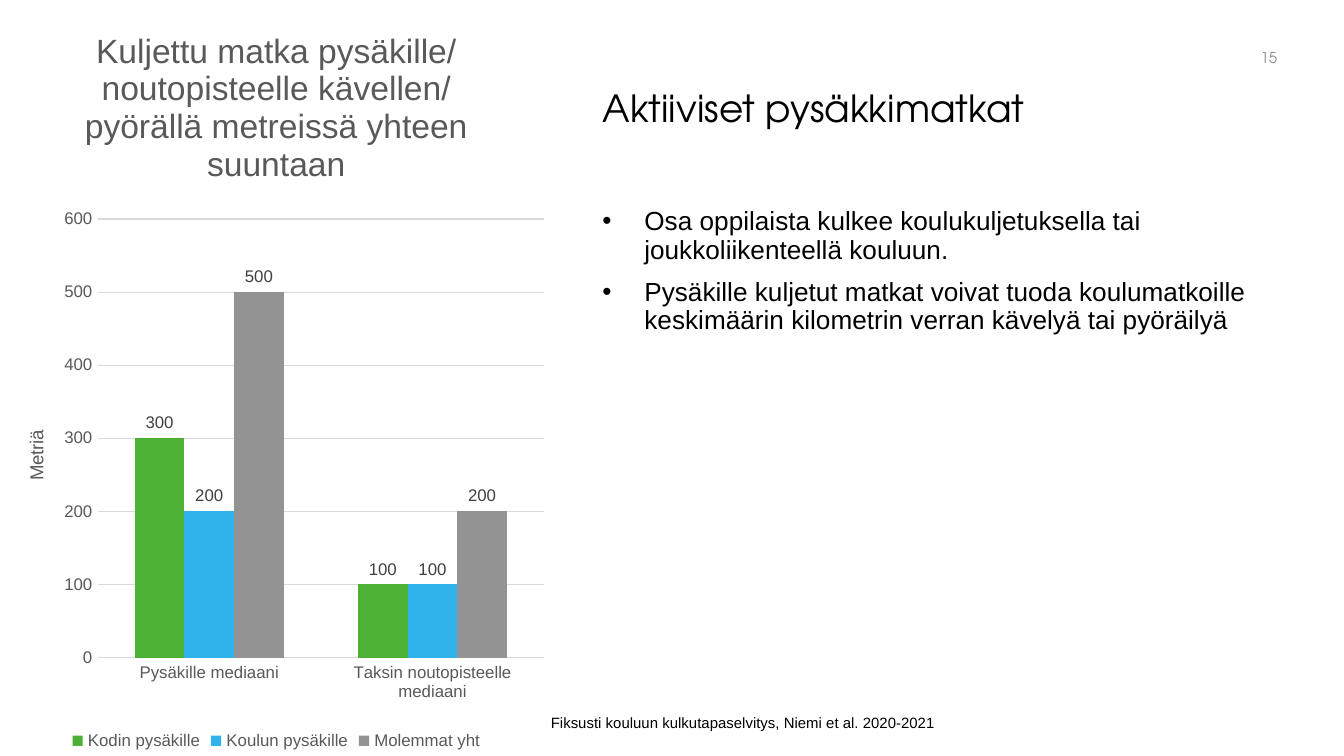
from dataclasses import dataclass

from lxml import etree
from pptx import Presentation
from pptx.chart.data import CategoryChartData
from pptx.dml.color import RGBColor
from pptx.enum.chart import XL_CHART_TYPE, XL_LABEL_POSITION, XL_LEGEND_POSITION, XL_TICK_MARK
from pptx.enum.shapes import MSO_SHAPE
from pptx.enum.text import MSO_ANCHOR, MSO_AUTO_SIZE, PP_ALIGN
from pptx.oxml.ns import qn
from pptx.util import Pt

COLUMNS = XL_CHART_TYPE.COLUMN_CLUSTERED
OUTSIDE = XL_LABEL_POSITION.OUTSIDE_END
BOTTOM = XL_LEGEND_POSITION.BOTTOM
NO_TICK = XL_TICK_MARK.NONE
RECT = MSO_SHAPE.RECTANGLE
TOP, MIDDLE = MSO_ANCHOR.TOP, MSO_ANCHOR.MIDDLE
NO_FIT, GROW = MSO_AUTO_SIZE.NONE, MSO_AUTO_SIZE.SHAPE_TO_FIT_TEXT
LEFT, CENTER = PP_ALIGN.LEFT, PP_ALIGN.CENTER


@dataclass(frozen=True)
class Theme:
    head: str = "TeX Gyre Adventor"
    body: str = "Arial"
    black: str = "000000"
    white: str = "FFFFFF"
    number: str = "8C8C8C"
    axis: str = "595959"
    label: str = "404040"
    grid: str = "D9D9D9"
    series: tuple = ("4BB033", "30B2EA", "939393")
    title_size: float = 20
    body_size: float = 14
    chart_title_size: float = 18
    axis_title_size: float = 10
    chart_size: float = 9
    small_size: float = 8


T = Theme()
CATEGORIES = ["Pysäkille mediaani", "Taksin noutopisteelle mediaani"]
SERIES = {
    "Kodin pysäkille": (300, 100),
    "Koulun pysäkille": (200, 100),
    "Molemmat yht": (500, 200),
}
CHART_TITLE = "Kuljettu matka pysäkille/noutopisteelle kävellen/pyörällä metreissä yhteen suuntaan"
BULLETS = [
    "Osa oppilaista kulkee koulukuljetuksella tai joukkoliikenteellä kouluun.",
    "Pysäkille kuljetut matkat voivat tuoda koulumatkoille keskimäärin kilometrin verran kävelyä tai pyöräilyä",
]
PLOT_LAYOUT = {"x": 0.18, "y": 0.29, "w": 0.8, "h": 0.58}


def set_attrs(obj, values):
    for name, value in values.items():
        setattr(obj, name, value)


def set_font(font, name, size, color):
    set_attrs(font, {"name": name, "size": Pt(size), "bold": False})
    font.color.rgb = RGBColor.from_string(color)


def place(sp, box):
    set_attrs(sp, dict(zip(("left", "top", "width", "height"), map(Pt, box))))


def add_title(s, box, text):
    sp = s.shapes.title
    place(sp, box)
    tf = sp.text_frame
    tf.text = text
    set_attrs(tf, {"vertical_anchor": MIDDLE, "word_wrap": True, "auto_size": NO_FIT})
    p = tf.paragraphs[0]
    set_attrs(p, {"alignment": LEFT, "line_spacing": 0.9})
    set_font(p.runs[0].font, T.head, T.title_size, T.black)


def add_bullets(s, box, lines):
    sp = s.placeholders[1]
    place(sp, box)
    tf = sp.text_frame
    tf.text = "\n".join(lines)
    set_attrs(tf, {"vertical_anchor": TOP, "word_wrap": True, "auto_size": NO_FIT})
    for i, p in enumerate(tf.paragraphs):
        set_attrs(p, {"line_spacing": 0.9, "space_before": Pt(7.5 if i else 0)})
        pPr = p._p.get_or_add_pPr()
        pPr.set("marL", str(Pt(22.5)))
        pPr.set("indent", str(Pt(-22.5)))
        etree.SubElement(pPr, qn("a:buFont")).set("typeface", T.body)
        etree.SubElement(pPr, qn("a:buChar")).set("char", "•")
        set_font(p.runs[0].font, T.body, T.body_size, T.black)


def add_number(s, box, text):
    tf = s.shapes.add_textbox(*map(Pt, box)).text_frame
    tf.text = text
    set_attrs(tf, {"vertical_anchor": MIDDLE, "word_wrap": True})
    p = tf.paragraphs[0]
    p.alignment = CENTER
    set_font(p.runs[0].font, T.head, T.small_size, T.number)


def add_source(s, box, text):
    sp = s.shapes.add_shape(RECT, *map(Pt, box))
    sp.shadow.inherit = False
    sp.fill.solid()
    sp.fill.fore_color.rgb = RGBColor.from_string(T.white)
    sp.line.fill.background()
    tf = sp.text_frame
    tf.text = text
    set_attrs(tf, {"vertical_anchor": TOP, "word_wrap": False, "auto_size": GROW})
    p = tf.paragraphs[0]
    p.alignment = LEFT
    set_font(p.runs[0].font, T.body, T.small_size, T.black)


def set_chart_text(titled, text, size):
    tf = titled.text_frame
    tf.text = text
    set_font(tf.paragraphs[0].runs[0].font, T.body, size, T.axis)


def set_line(line, color):
    line.color.rgb = RGBColor.from_string(color)
    line.width = Pt(0.75)


def set_plot_layout(chart):
    area = chart._chartSpace.chart.plotArea
    for old in area.findall(qn("c:layout")):
        area.remove(old)
    layout = etree.Element(qn("c:layout"))
    area.insert(0, layout)
    manual = etree.SubElement(layout, qn("c:manualLayout"))
    values = {"layoutTarget": "inner", "xMode": "edge", "yMode": "edge", **PLOT_LAYOUT}
    for name, value in values.items():
        etree.SubElement(manual, qn(f"c:{name}")).set("val", str(value))


def add_distance_chart(s, box):
    data = CategoryChartData()
    data.categories = CATEGORIES
    for name, values in SERIES.items():
        data.add_series(name, values)
    chart = s.shapes.add_chart(COLUMNS, *map(Pt, box), data).chart
    set_font(chart.font, T.body, T.axis_title_size, T.black)
    set_chart_text(chart.chart_title, CHART_TITLE, T.chart_title_size)
    chart.chart_title.include_in_layout = False

    chart.has_legend = True
    set_attrs(chart.legend, {"position": BOTTOM, "include_in_layout": False})
    set_font(chart.legend.font, T.body, T.chart_size, T.axis)

    cat, val = chart.category_axis, chart.value_axis
    for axis in (cat, val):
        set_attrs(axis, {"major_tick_mark": NO_TICK, "minor_tick_mark": NO_TICK})
        set_font(axis.tick_labels.font, T.body, T.chart_size, T.axis)
    set_line(cat.format.line, T.grid)
    val.format.line.fill.background()
    set_attrs(val, {"minimum_scale": 0, "maximum_scale": 600, "major_unit": 100})
    set_line(val.major_gridlines.format.line, T.grid)
    set_chart_text(val.axis_title, "Metriä", T.axis_title_size)

    plot = chart.plots[0]
    set_attrs(plot, {"gap_width": 150, "overlap": 0, "vary_by_categories": False})
    for series, color in zip(plot.series, T.series):
        series.format.fill.solid()
        series.format.fill.fore_color.rgb = RGBColor.from_string(color)
        labels = series.data_labels
        set_attrs(labels, {"show_value": True, "position": OUTSIDE})
        set_font(labels.font, T.body, T.chart_size, T.label)
    set_plot_layout(chart)


def main():
    prs = Presentation()
    set_attrs(prs, {"slide_width": Pt(720), "slide_height": Pt(405)})
    s = prs.slides.add_slide(prs.slide_layouts[1])
    add_title(s, (315.5, 21.5, 376.5, 75.5), "Aktiiviset pysäkkimatkat")
    add_bullets(s, (315.5, 108, 376.5, 206.5), BULLETS)
    add_number(s, (666, 21.5, 27.5, 18.5), "15")
    add_distance_chart(s, (-1.5, 0, 299, 405))
    add_source(s, (288, 379, 222.5, 17), "Fiksusti kouluun kulkutapaselvitys, Niemi et al. 2020-2021")
    prs.save("out.pptx")


if __name__ == "__main__":
    main()
